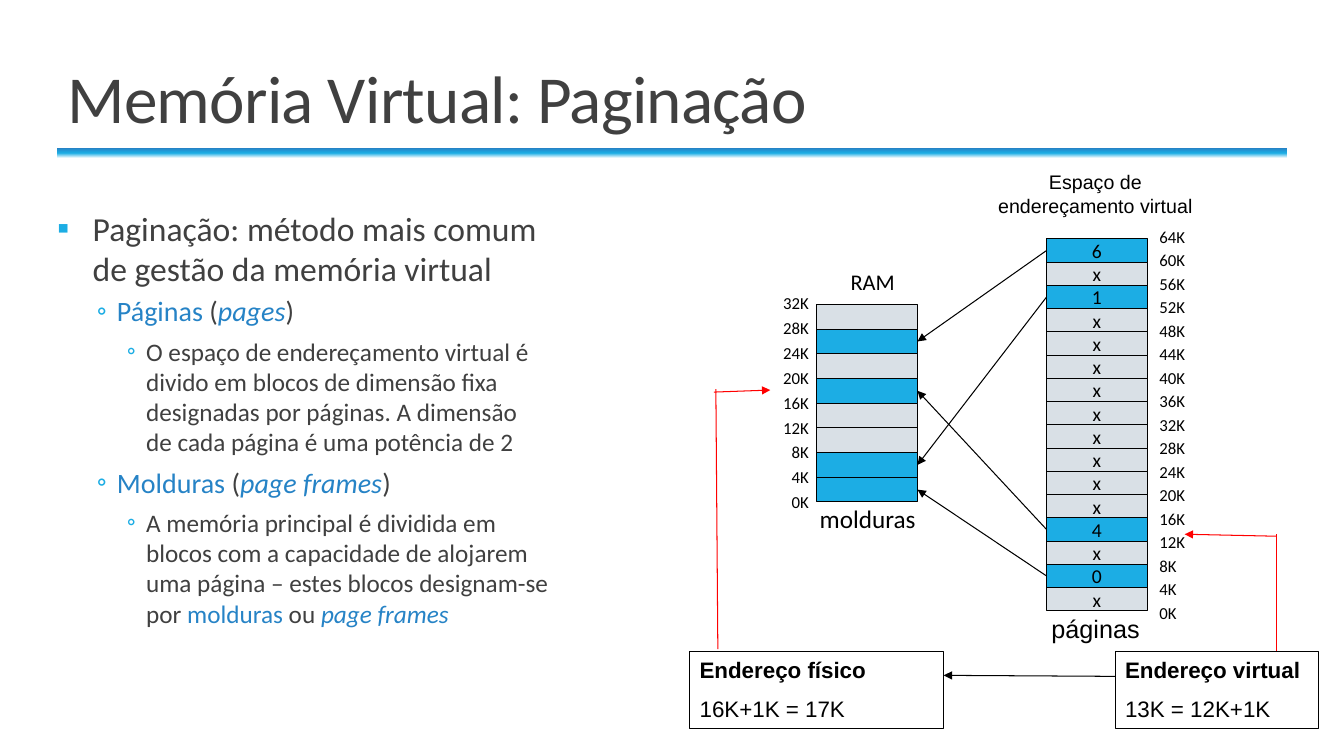
import pptx
import pptx.dml.color
import pptx.enum.dml
import pptx.enum.shapes
import pptx.enum.text
import pptx.oxml.ns
import pptx.util
import copy
import lxml.etree

COLUMNS, ROWS = 13.33, 7.5
BLUE, SKY, GREY, TEXT, BLACK, RED = "2683C6", "1CADE4", "D9E0E6", "404040", "000000", "FF0000"
ALIGN = pptx.enum.text.PP_ALIGN
ANCHOR = pptx.enum.text.MSO_ANCHOR
RECTANGLE = pptx.enum.shapes.MSO_SHAPE.RECTANGLE
STRAIGHT = pptx.enum.shapes.MSO_CONNECTOR.STRAIGHT

PAGES = ["6", "x", "1"] + ["x"] * 9 + ["4", "x", "0", "x"]
FRAME_COUNT = 8
BULLET_LEVELS = [(24, 0.35, -0.35, 12, 2, "▪"), (20, 0.59, -0.2, 2, 4, "◦"), (18, 0.88, -0.19, 2, 4, "◦")]
BULLETS = [
    (0, [("Paginação: método mais comum\nde gestão da memória virtual", TEXT, False)]),
    (1, [("Páginas", BLUE, False), (" (", TEXT, False), ("pages", BLUE, True), (")", TEXT, False)]),
    (2, [("O espaço de endereçamento virtual é\ndivido em blocos de dimensão fixa\n"
          "designadas por páginas. A dimensão\nde cada página é uma potência de 2", TEXT, False)]),
    (1, [("Molduras", BLUE, False), (" (", TEXT, False), ("page frames", BLUE, True), (")", TEXT, False)]),
    (2, [("A memória principal é dividida em\nblocos com a capacidade de alojarem\n"
          "uma página – estes blocos designam-se\npor ", TEXT, False),
         ("molduras", BLUE, False), (" ou ", TEXT, False), ("page frames", BLUE, True)]),
]


def color(value):
    return pptx.dml.color.RGBColor.from_string(value)


def grid(*lengths):
    return [pptx.util.Inches(length) for length in lengths]


def add_xml(parent, tag, **attributes):
    return lxml.etree.SubElement(parent, pptx.oxml.ns.qn(tag), attributes)


def format_run(run, size, value, font="Calibri", bold=False, italic=False):
    run.font.size = pptx.util.Pt(size)
    run.font.name = font
    run.font.color.rgb = color(value)
    run.font.bold = bold
    run.font.italic = italic


def add_text(slide, box, text, size, font="Calibri", align=ALIGN.LEFT, value=BLACK):
    shape = slide.shapes.add_textbox(*grid(*box))
    shape.text_frame.word_wrap = True
    shape.text_frame.text = text
    paragraph = shape.text_frame.paragraphs[0]
    paragraph.alignment = align
    format_run(paragraph.runs[0], size, value, font)
    return shape


def add_rectangle(slide, box, fill=None):
    shape = slide.shapes.add_shape(RECTANGLE, *grid(*box))
    shape.shadow.inherit = False
    if fill:
        shape.fill.solid()
        shape.fill.fore_color.rgb = color(fill)
    else:
        shape.fill.background()
    shape.line.color.rgb = color(BLACK)
    shape.line.width = pptx.util.Pt(0.75)
    return shape


def add_line(slide, start=(0, 0), end=(0, 0), value=BLACK, arrow=True):
    connector = slide.shapes.add_connector(STRAIGHT, *grid(*start, *end))
    connector.line.color.rgb = color(value)
    connector.line.width = pptx.util.Pt(0.75)
    if arrow:
        add_xml(connector.line._get_or_add_ln(), "a:tailEnd", type="triangle")
    add_xml(connector._element.spPr, "a:effectLst")
    return connector


def add_title(slide, box):
    left, top, width, height = box
    rule = slide.shapes.add_shape(RECTANGLE, *grid(left, top + height + 0.06, width, 0.1))
    rule.shadow.inherit = False
    rule.line.fill.background()
    rule.fill.gradient()
    rule.fill.gradient_angle = 90
    first = rule._element.spPr.find(".//" + pptx.oxml.ns.qn("a:gs"))
    first.addnext(copy.deepcopy(first))
    for stop, position, value in zip(rule.fill.gradient_stops, (0, 0.5, 1), ("FFFFFF", SKY, BLUE)):
        stop.position = position
        stop.color.rgb = color(value)
    title = add_text(slide, box, "Memória Virtual: Paginação", 48, value=TEXT)
    title.text_frame.vertical_anchor = ANCHOR.BOTTOM
    paragraph = title.text_frame.paragraphs[0]
    paragraph.line_spacing = 0.85
    paragraph.runs[0]._r.get_or_add_rPr().set("spc", "-50")


def add_bullets(slide, box):
    frame = slide.shapes.add_textbox(*grid(*box)).text_frame
    frame.word_wrap = True
    frame.margin_left = frame.margin_right = 0
    for index, (level, pieces) in enumerate(BULLETS):
        paragraph = frame.add_paragraph() if index else frame.paragraphs[0]
        size, margin, indent, before, after, mark = BULLET_LEVELS[level]
        paragraph.level = level
        paragraph.space_before = pptx.util.Pt(before)
        paragraph.space_after = pptx.util.Pt(after)
        properties = paragraph._p.get_or_add_pPr()
        properties.set("marL", str(pptx.util.Inches(margin)))
        properties.set("indent", str(pptx.util.Inches(indent)))
        add_xml(add_xml(properties, "a:buClr"), "a:srgbClr", val=SKY)
        add_xml(properties, "a:buFont", typeface="Calibri")
        add_xml(properties, "a:buChar", char=mark)
        for text, value, italic in pieces:
            for number, line in enumerate(text.split("\n")):
                if number:
                    paragraph.add_line_break()
                run = paragraph.add_run()
                run.text = line
                format_run(run, size, value, italic=italic)


def add_memory(slide, box, cells, used):
    left, top, width, height = box
    step = height / len(cells)
    shapes = []
    for index, text in enumerate(cells):
        shape = add_rectangle(slide, (left, top + index * step, width, step), SKY if index in used else GREY)
        if text:
            frame = shape.text_frame
            frame.word_wrap = False
            frame.vertical_anchor = ANCHOR.MIDDLE
            frame.text = text
            frame.paragraphs[0].alignment = ALIGN.CENTER
            format_run(frame.paragraphs[0].runs[0], 14, BLACK)
        shapes.append(shape)
    return shapes


def add_addresses(slide, box, count, align):
    left, top, width, height = box
    for index in range(count + 1):
        label = f"{4 * (count - index)}K"
        add_text(slide, (left, top + index * height / count, width, 0.3), label, 12, align=align)


def add_ram(slide, box, used):
    left, top, width, height = box
    add_text(slide, (left + 0.04, top - 0.41, 1.03, 0.37), "RAM", 16, align=ALIGN.CENTER)
    add_text(slide, (left - 0.12, top + height - 0.04, 1.25, 0.4), "molduras", 18, align=ALIGN.CENTER)
    add_addresses(slide, (left - 0.53, top - 0.16, 0.55, height + 0.01), FRAME_COUNT, ALIGN.RIGHT)
    return add_memory(slide, box, [""] * FRAME_COUNT, used)


def add_virtual_space(slide, box, used):
    left, top, width, height = box
    add_text(slide, (left - 0.58, top - 0.73, 2.13, 0.57), "Espaço de endereçamento virtual", 14, "Arial", ALIGN.CENTER)
    add_text(slide, (left - 0.14, top + height - 0.02, 1.25, 0.4), "páginas", 18, "Arial", ALIGN.CENTER)
    add_addresses(slide, (left + width + 0.02, top - 0.17, 0.55, height + 0.04), len(PAGES), ALIGN.LEFT)
    return add_memory(slide, box, PAGES, used)


def add_mapping(slide, ram_box, virtual_box):
    mapping = {page: FRAME_COUNT - 1 - int(text) for page, text in enumerate(PAGES) if text != "x"}
    frames = add_ram(slide, ram_box, mapping.values())
    pages = add_virtual_space(slide, virtual_box, mapping)
    for page, frame in mapping.items():
        arrow = add_line(slide)
        arrow.begin_connect(pages[page], 1)
        arrow.end_connect(frames[frame], 3)


def add_address_box(slide, box, heading, formula):
    frame = add_rectangle(slide, box).text_frame
    frame.word_wrap = True
    frame.vertical_anchor = ANCHOR.TOP
    frame.text = f"{heading}\n{formula}"
    for index, paragraph in enumerate(frame.paragraphs):
        paragraph.alignment = ALIGN.LEFT
        paragraph.space_before = pptx.util.Pt(9 * index)
        format_run(paragraph.runs[0], 16, BLACK, "Arial", bold=index == 0)


def add_translation(slide, box):
    left, top, width, height = box
    right = left + width
    add_address_box(slide, (left, top, 2.52, height), "Endereço físico", "16K+1K = 17K")
    add_address_box(slide, (right - 2.02, top, 2.02, height), "Endereço virtual", "13K = 12K+1K")
    add_line(slide, (right - 2.02, top + 0.25), (left + 2.52, top + 0.24))
    add_line(slide, (left + 0.26, top - 2.6), (left + 0.28, top - 0.02), RED, False)
    add_line(slide, (left + 0.24, top - 2.57), (left + 0.8, top - 2.59), RED)
    add_line(slide, (right - 0.42, top - 1.16), (right - 0.42, top), RED, False)
    add_line(slide, (right - 0.42, top - 1.14), (right - 1.33, top - 1.16), RED)


def main():
    presentation = pptx.Presentation()
    presentation.slide_width, presentation.slide_height = grid(COLUMNS, ROWS)
    slide = presentation.slides.add_slide(presentation.slide_layouts[6])
    add_title(slide, (0.57, 0.29, 12.2, 1.12))
    add_bullets(slide, (0.57, 2.01, 12.2, 4.82))
    add_mapping(slide, (8.1, 3.02, 1, 1.96), (10.38, 2.37, 1, 3.69))
    add_translation(slide, (6.84, 6.46, 6.24, 0.77))
    presentation.save("out.pptx")


if __name__ == "__main__":
    main()
